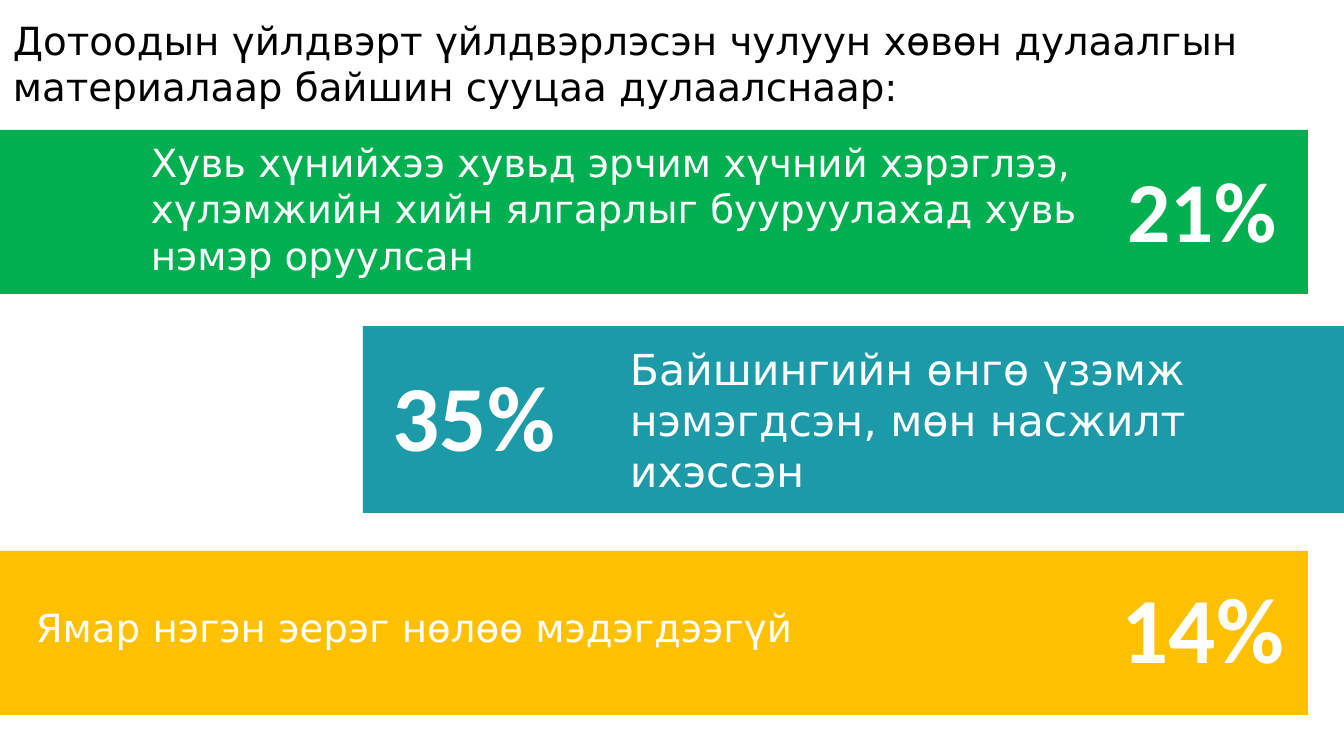
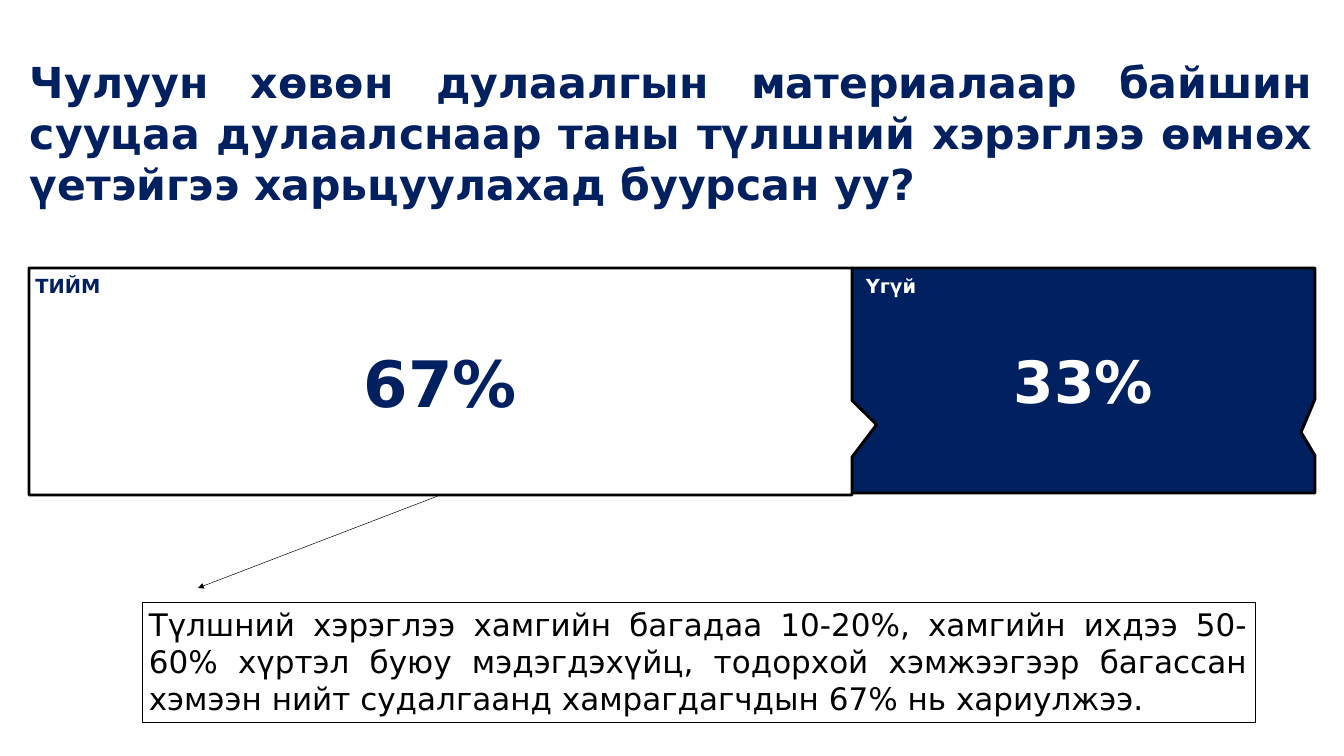
import pptx
import pptx.util
import pptx.dml.color
import pptx.enum.shapes
import pptx.enum.text
import pptx.oxml
import pptx.oxml.ns

PX = 13100
WIDE, HIGH = 1344, 756
SANS, CALI = "DejaVu Sans", "Calibri"
WHITE, BLACK, NAVY = "FFFFFF", "000000", "002060"
GREEN, TEAL, AMBER = "00B050", "1C9AA8", "FFC000"
SHAPE = pptx.enum.shapes.MSO_SHAPE
ALIGN = pptx.enum.text.PP_ALIGN
ANCHOR = pptx.enum.text.MSO_ANCHOR


def emu(*nums):
    return [pptx.util.Emu(num * PX) for num in nums]


def tint(code):
    return pptx.dml.color.RGBColor.from_string(code)


def inner(box, part):
    """Turn a part given relative to the box into slide px."""
    return box[0] + part[0], box[1] + part[1], part[2], part[3]


def write(shape, words, size=40, color=WHITE, font=SANS, bold=False,
          align=ALIGN.LEFT, anchor=ANCHOR.TOP):
    frame = shape.text_frame
    frame.word_wrap = True
    frame.auto_size = pptx.enum.text.MSO_AUTO_SIZE.NONE
    frame.vertical_anchor = anchor
    para = frame.paragraphs[0]
    para.alignment = align
    run = para.add_run()
    run.text = words
    face = run.font
    face.name, face.size, face.bold = font, pptx.util.Pt(size), bold
    face.color.rgb = tint(color)


def label(slide, box, words, **style):
    write(slide.shapes.add_textbox(*emu(*box)), words, **style)


def block(slide, kind, box, fill=None, line=0):
    shape = slide.shapes.add_shape(kind, *emu(*box))
    shape.shadow.inherit = False
    if fill:
        shape.fill.solid()
        shape.fill.fore_color.rgb = tint(fill)
    else:
        shape.fill.background()
    if line:
        shape.line.color.rgb = tint(BLACK)
        shape.line.width = pptx.util.Pt(line)
    else:
        shape.line.fill.background()
    return shape


def page(deck, box, words, **style):
    """Add a slide whose title fills the box."""
    slide = deck.slides.add_slide(deck.slide_layouts[5])
    title = slide.shapes.title
    title.left, title.top, title.width, title.height = emu(*box)
    write(title, words, **style)
    return slide


def band(slide, box, fill, words, area, size, share, spot, big):
    block(slide, SHAPE.RECTANGLE, box, fill)
    label(slide, inner(box, area), words, size=size)
    label(slide, inner(box, spot), share, size=big, font=CALI, bold=True)


def panel(slide, box, fill, color, name, share, size, tip):
    """Draw an answer as a callout with its name in the corner."""
    shape = block(slide, SHAPE.RECTANGULAR_CALLOUT, box, fill, 3)
    shape.adjustments[0], shape.adjustments[1] = tip
    write(shape, share, size=size, color=color, bold=True,
          align=ALIGN.CENTER, anchor=ANCHOR.MIDDLE)
    label(slide, inner(box, (-19, 3, 116, 31)), name, size=20, color=color,
          bold=True, align=ALIGN.CENTER)
    return shape


def arrow(slide, start, end):
    """Draw an arrow from the bottom middle of the start shape."""
    line = slide.shapes.add_connector(
        pptx.enum.shapes.MSO_CONNECTOR.STRAIGHT, *emu(0, 0, *end))
    line.begin_connect(start, 2)
    line.line.color.rgb = tint(BLACK)
    line.line.width = pptx.util.Pt(0.5)
    space = pptx.oxml.ns.nsdecls("a")
    head = pptx.oxml.parse_xml(f'<a:tailEnd {space} type="triangle"/>')
    line.line._get_or_add_ln().append(head)
    flat = pptx.oxml.parse_xml(f"<a:effectLst {space}/>")
    line._element.spPr.append(flat)


def gains(deck):
    slide = page(
        deck, (6, 13, 1309, 101),
        "Дотоодын үйлдвэрт үйлдвэрлэсэн чулуун хөвөн дулаалгын "
        "материалаар байшин сууцаа дулаалснаар:", color=BLACK)
    band(slide, (0, 130, 1308, 164), GREEN,
         "Хувь хүнийхээ хувьд эрчим хүчний хэрэглээ, хүлэмжийн хийн "
         "ялгарлыг бууруулахад хувь нэмэр оруулсан",
         (144, 5, 1023, 148), 40, "21%", (1121, 24, 200, 110), 88)
    band(slide, (363, 326, 981, 187), TEAL,
         "Байшингийн өнгө үзэмж нэмэгдсэн, мөн насжилт ихэссэн",
         (260, 13, 692, 162), 44, "35%", (23, 29, 276, 120), 96)
    band(slide, (0, 551, 1308, 164), AMBER,
         "Ямар нэгэн эерэг нөлөө мэдэгдээгүй",
         (29, 49, 920, 54), 40, "14%", (1115, 16, 200, 120), 96)


def fuel(deck):
    slide = page(
        deck, (23, 52, 1298, 162),
        "Чулуун хөвөн дулаалгын материалаар байшин сууцаа дулаалснаар "
        "таны түлшний хэрэглээ өмнөх үетэйгээ харьцуулахад буурсан уу?",
        size=44, color=NAVY, bold=True, align=ALIGN.JUSTIFY)
    panel(slide, (852, 268, 463, 225), NAVY, WHITE, "Үгүй", "33%", 60,
          (0.47, 0.23))
    yes = panel(slide, (29, 268, 823, 227), WHITE, NAVY, "ТИЙМ", "67%", 66,
                (0.53, 0.19))
    arrow(slide, yes, (198, 588))
    note = block(slide, SHAPE.RECTANGLE, (142, 602, 1113, 120), line=0.75)
    write(note, "Түлшний хэрэглээ хамгийн багадаа 10-20%, хамгийн ихдээ "
          "50-60% хүртэл буюу мэдэгдэхүйц, тодорхой хэмжээгээр багассан "
          "хэмээн нийт судалгаанд хамрагдагчдын 67% нь хариулжээ.",
          size=32, color=BLACK, align=ALIGN.JUSTIFY)


def main():
    deck = pptx.Presentation()
    deck.slide_width, deck.slide_height = emu(WIDE, HIGH)
    gains(deck)
    fuel(deck)
    deck.save("out.pptx")


if __name__ == "__main__":
    main()
